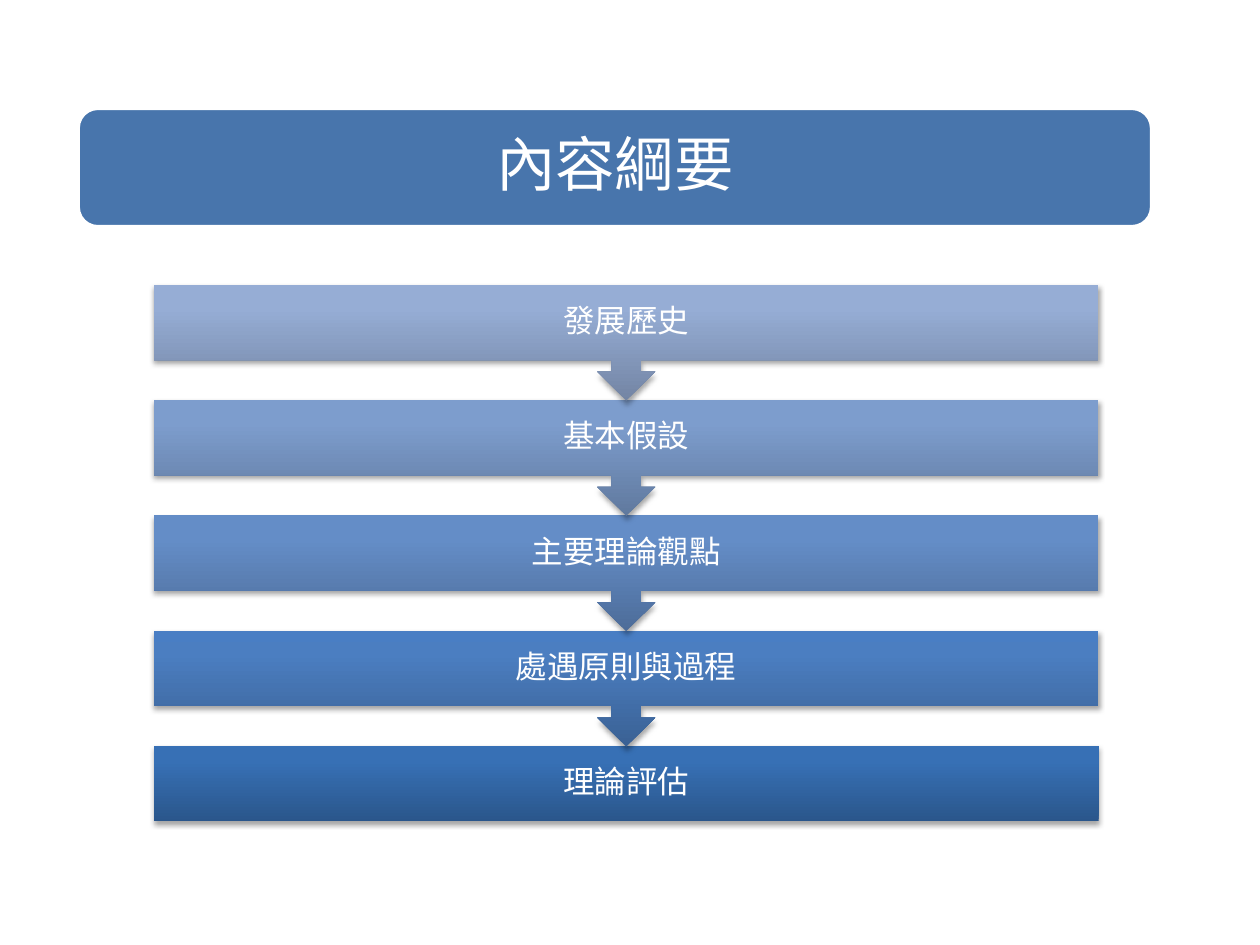
from pptx import Presentation
from pptx.dml.color import RGBColor
from pptx.enum import shapes, text
from pptx.oxml import parse_xml
from pptx.oxml.ns import nsdecls, qn
from pptx.util import Inches, Pt

TITLE_BLUE = RGBColor(0x48, 0x75, 0xAC)
WHITE = RGBColor(0xFF, 0xFF, 0xFF)

# Label, then gradient colours from the bottom edge (0 %) to 80 % and the top
STEPS = [
    ("發展歷史", (RGBColor(0x73, 0x85, 0xA4), RGBColor(0x96, 0xAD, 0xD5), RGBColor(0x95, 0xAD, 0xD7))),
    ("基本假設", (RGBColor(0x60, 0x79, 0x9E), RGBColor(0x7D, 0x9D, 0xCD), RGBColor(0x7C, 0x9D, 0xD0))),
    ("主要理論觀點", (RGBColor(0x4D, 0x6C, 0x99), RGBColor(0x64, 0x8D, 0xC7), RGBColor(0x63, 0x8D, 0xCA))),
    ("處遇原則與過程", (RGBColor(0x3A, 0x61, 0x94), RGBColor(0x4B, 0x7E, 0xC1), RGBColor(0x49, 0x7E, 0xC4))),
    ("理論評估", (RGBColor(0x2A, 0x56, 0x8B), RGBColor(0x37, 0x70, 0xB5), RGBColor(0x35, 0x70, 0xB8))),
]
LEFT, TOP, WIDTH = Inches(1.22), Inches(2.26), Inches(7.5)
BAR_HEIGHT, CALLOUT_HEIGHT = Inches(0.6), Inches(0.92)
PITCH = (Inches(5.92) - TOP) // (len(STEPS) - 1)


def add_label(s, label, size, left, top, width, height):
    tf = s.shapes.add_textbox(left, top, width, height).text_frame
    tf.word_wrap = True
    tf.vertical_anchor = text.MSO_ANCHOR.MIDDLE
    tf.margin_left = tf.margin_right = tf.margin_top = tf.margin_bottom = Inches(0.14)
    p = tf.paragraphs[0]
    p.text = label
    p.alignment = text.PP_ALIGN.CENTER
    p.line_spacing = 0.9
    p.space_after = Pt(size * 0.35)
    p.font.size = Pt(size)
    p.font.name = "Calibri"
    p.font.color.rgb = WHITE


def add_shading(sp, colors):
    """Give the shape an upward gradient and a soft shadow below it."""
    sp.fill.background()
    stops = "".join(
        f'<a:gs pos="{pos}"><a:srgbClr val="{color}"/></a:gs>'
        for pos, color in zip((0, 80000, 100000), colors)
    )
    spPr = sp._element.spPr
    spPr.replace(spPr.find(qn("a:noFill")), parse_xml(
        f'<a:gradFill {nsdecls("a")} rotWithShape="0"><a:gsLst>{stops}</a:gsLst>'
        '<a:lin ang="16200000" scaled="0"/></a:gradFill>'))
    sp.line.fill.background()
    sp.shadow.inherit = False
    spPr.find(qn("a:effectLst")).append(parse_xml(
        f'<a:outerShdw {nsdecls("a")} blurRad="{Pt(3.1)}" dist="{Pt(1.8)}" dir="5400000" '
        'rotWithShape="0"><a:srgbClr val="000000"><a:alpha val="35000"/></a:srgbClr></a:outerShdw>'))


prs = Presentation()
prs.slide_width, prs.slide_height = Inches(10), Inches(7.5)
s = prs.slides.add_slide(prs.slide_layouts[6])

banner = s.shapes.add_shape(shapes.MSO_SHAPE.ROUNDED_RECTANGLE,
                            Inches(0.62), Inches(0.86), Inches(8.52), Inches(0.94))
banner.shadow.inherit = False
banner.fill.solid()
banner.fill.fore_color.rgb = TITLE_BLUE
banner.line.color.rgb = WHITE
banner.line.width = Pt(2)
add_label(s, "內容綱要", 34, Inches(0.67), Inches(0.91), Inches(8.42), Inches(0.84))

# Bottom step first, so that each arrow tip lies over the bar below it
last = len(STEPS) - 1
for i, (label, colors) in reversed(list(enumerate(STEPS))):
    top = TOP + i * PITCH
    if i == last:
        sp = s.shapes.add_shape(shapes.MSO_SHAPE.RECTANGLE, LEFT, top, WIDTH, BAR_HEIGHT)
    else:
        sp = s.shapes.add_shape(shapes.MSO_SHAPE.UP_ARROW_CALLOUT, LEFT, top, WIDTH, CALLOUT_HEIGHT)
        sp.rotation = 180
    add_shading(sp, colors)
    add_label(s, label, 18, LEFT, top, WIDTH, BAR_HEIGHT)

prs.save("out.pptx")
